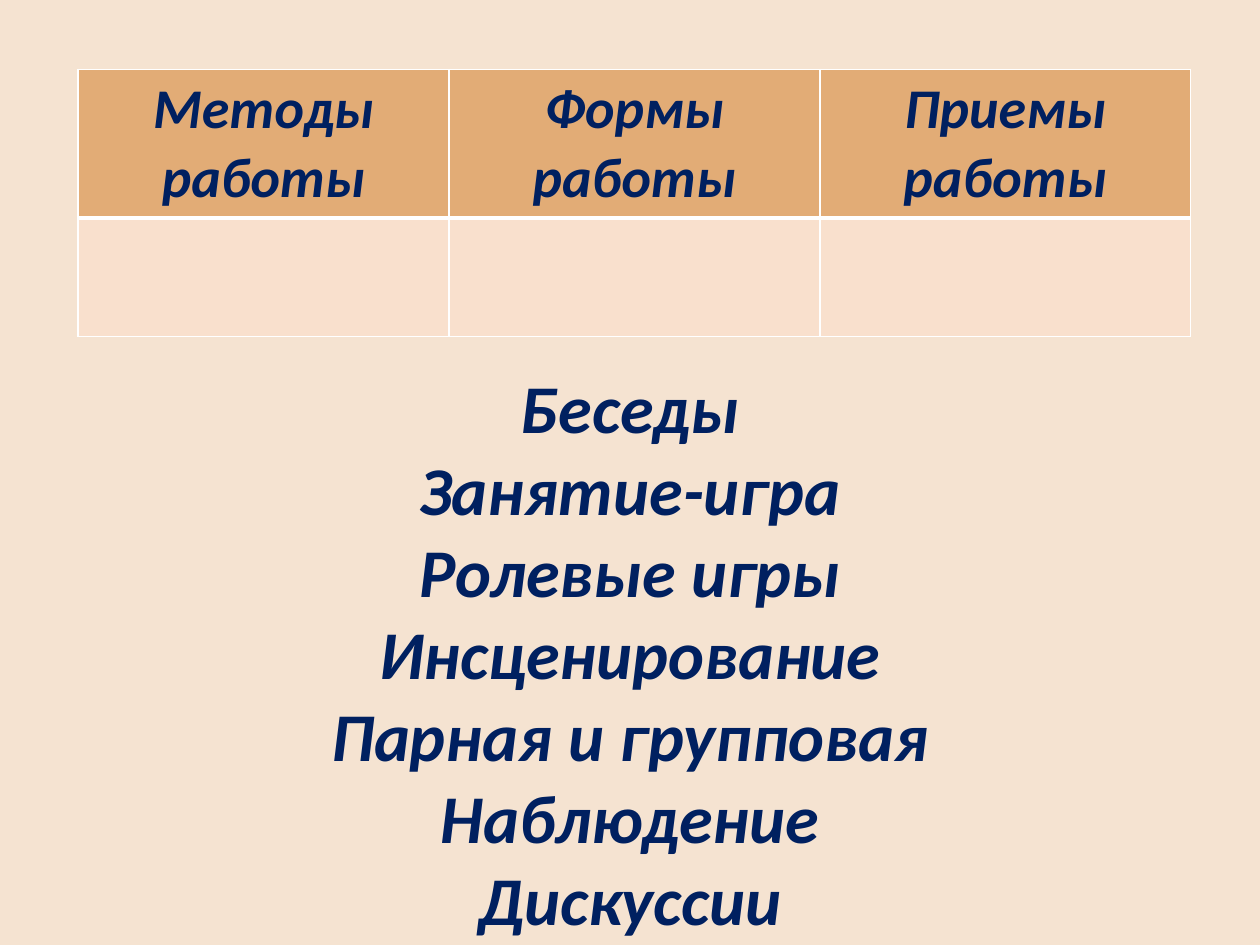
from dataclasses import dataclass

from lxml import etree
from pptx import Presentation
from pptx.dml.color import RGBColor
from pptx.enum.text import MSO_ANCHOR, PP_ALIGN
from pptx.oxml.ns import qn
from pptx.util import Inches, Pt

CENTER = PP_ALIGN.CENTER
BOTTOM = MSO_ANCHOR.BOTTOM


@dataclass(frozen=True)
class Theme:
    background: str = "F5E3D1"
    header_fill: str = "E2AC76"
    body_fill: str = "F9E0CD"
    border: str = "FFFFFF"
    text: str = "002060"
    font: str = "Calibri"
    header_size: int = 32
    list_size: int = 39
    thin_line: int = 1
    thick_line: int = 3


@dataclass(frozen=True)
class RowStyle:
    height: float
    fill: str
    top_line: int
    bottom_line: int


THEME = Theme()
HEADINGS = ("Методы работы", "Формы работы", "Приемы работы")
ROWS = (
    RowStyle(1.18, THEME.header_fill, THEME.thin_line, THEME.thick_line),
    RowStyle(0.94, THEME.body_fill, THEME.thick_line, THEME.thin_line),
)
ACTIVITIES = (
    "Беседы",
    "Занятие-игра",
    "Ролевые игры",
    "Инсценирование",
    "Парная и групповая",
    "Наблюдение",
    "Дискуссии",
)


def style_paragraph(paragraph, size: int) -> None:
    paragraph.alignment = CENTER
    font = paragraph.font
    font.name = THEME.font
    font.size = Pt(size)
    font.bold = font.italic = True
    font.color.rgb = RGBColor.from_string(THEME.text)


def style_cell(cell, row: RowStyle) -> None:
    """Set the cell's borders, then its fill, in schema order."""
    properties = cell._tc.get_or_add_tcPr()
    widths = {
        "a:lnL": THEME.thin_line,
        "a:lnR": THEME.thin_line,
        "a:lnT": row.top_line,
        "a:lnB": row.bottom_line,
    }
    for tag, width in widths.items():
        line = etree.SubElement(properties, qn(tag), w=str(Pt(width)))
        fill = etree.SubElement(line, qn("a:solidFill"))
        etree.SubElement(fill, qn("a:srgbClr"), val=THEME.border)
    cell.fill.solid()
    cell.fill.fore_color.rgb = RGBColor.from_string(row.fill)


def add_methods_table(slide) -> None:
    height = sum(row.height for row in ROWS)
    table = slide.shapes.add_table(
        len(ROWS), len(HEADINGS),
        Inches(0.62), Inches(0.55), Inches(8.83), Inches(height),
    ).table
    for row_index, row in enumerate(ROWS):
        table.rows[row_index].height = Inches(row.height)
        for column in range(len(HEADINGS)):
            style_cell(table.cell(row_index, column), row)
    for column, heading in enumerate(HEADINGS):
        cell = table.cell(0, column)
        cell.text = heading
        style_paragraph(cell.text_frame.paragraphs[0], THEME.header_size)


def add_activity_list(slide) -> None:
    box = slide.shapes.add_textbox(Inches(0.31), Inches(2.03), Inches(9.38), Inches(5.47))
    frame = box.text_frame
    frame.word_wrap = True
    frame.vertical_anchor = BOTTOM
    frame.text = "\n".join(ACTIVITIES)
    for paragraph in frame.paragraphs:
        style_paragraph(paragraph, THEME.list_size)


def main() -> None:
    presentation = Presentation()
    presentation.slide_width = Inches(10)
    presentation.slide_height = Inches(7.5)
    slide = presentation.slides.add_slide(presentation.slide_layouts[6])
    background = slide.background.fill
    background.solid()
    background.fore_color.rgb = RGBColor.from_string(THEME.background)
    add_activity_list(slide)
    add_methods_table(slide)
    presentation.save("out.pptx")


if __name__ == "__main__":
    main()
